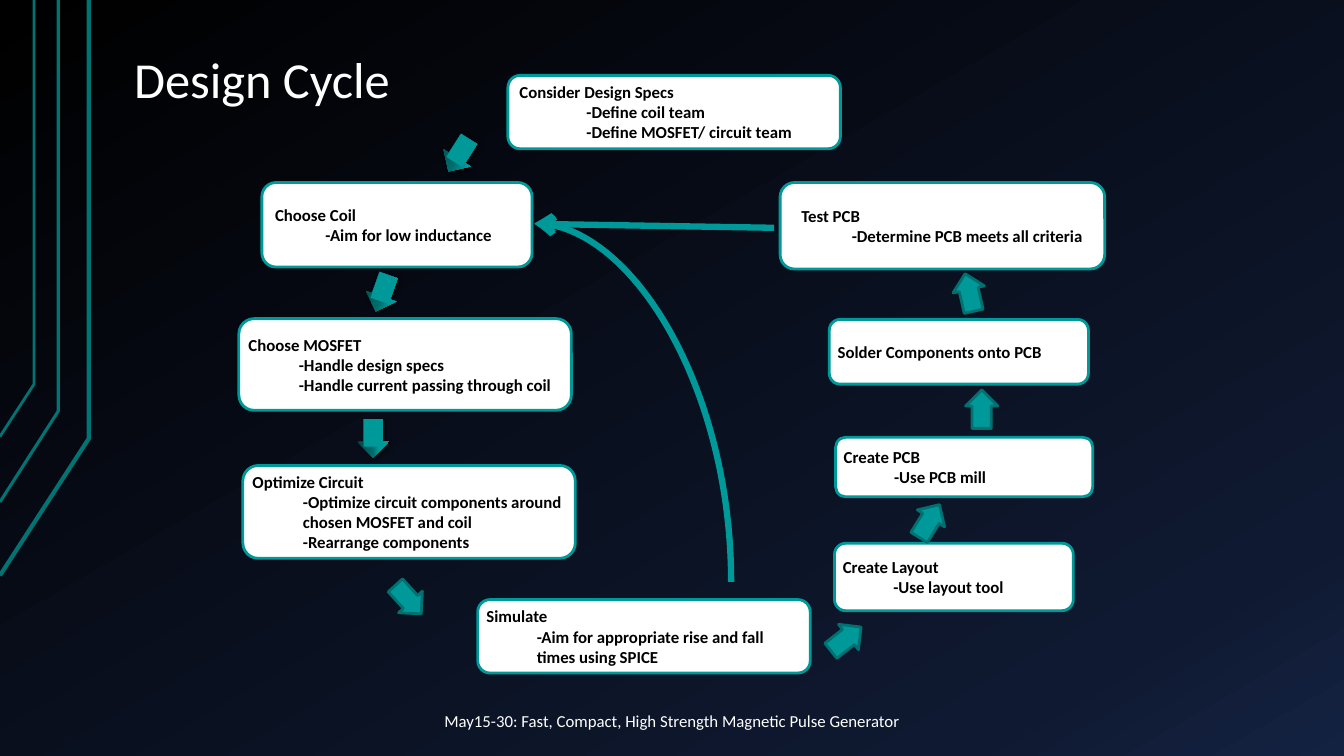
from math import cos, radians, sin

from lxml import etree
from pptx import Presentation
from pptx.dml.color import RGBColor
from pptx.enum.shapes import MSO_CONNECTOR, MSO_SHAPE
from pptx.enum.text import MSO_ANCHOR, PP_ALIGN
from pptx.oxml.ns import qn
from pptx.util import Cm, Pt

ROUNDED = MSO_SHAPE.ROUNDED_RECTANGLE
RECTANGLE = MSO_SHAPE.RECTANGLE
RIGHT_ARROW = MSO_SHAPE.RIGHT_ARROW
STRAIGHT = MSO_CONNECTOR.STRAIGHT
CURVE = MSO_CONNECTOR.CURVE
MIDDLE = MSO_ANCHOR.MIDDLE
BOTTOM = MSO_ANCHOR.BOTTOM
LEFT = PP_ALIGN.LEFT
CENTER = PP_ALIGN.CENTER

TEAL, DARK_TEAL, RAIL_TEAL = "009999", "007171", "007373"
WHITE, BLACK = "FFFFFF", "000000"
NIGHT_SKY = [(0, BLACK), (85, "0F1931"), (100, "142242")]
TEAL_SHADE = [(0, "004343"), (50, "006C6C"), (70, "019B9B"), (100, TEAL)]

TITLE_FONT = {"name": "Calibri", "size": Pt(36), "bold": False}
FOOTER_FONT = {"name": "Calibri", "size": Pt(12), "bold": False}
STEP_FONT = {"name": "Calibri", "size": Pt(12), "bold": True}

ARROW_LENGTH, ARROW_WIDTH = 0.97, 0.81
SHAFT_LENGTH, SHAFT_WIDTH = 0.69, 0.48

STEPS = [
    ((12.8, 1.9, 8.38, 1.85), 0.2, 1.69,
     ["Consider Design Specs", "-Define coil team", "-Define MOSFET/ circuit team"]),
    ((6.6, 4.6, 6.81, 2.13), 0.23, 1.27,
     ["Choose Coil", "-Aim for low inductance"]),
    ((6.02, 8.03, 8.38, 2.31), 0.13, 1.27,
     ["Choose MOSFET", "-Handle design specs", "-Handle current passing through coil"]),
    ((6.12, 11.73, 8.38, 2.34), 0.13, 1.27,
     ["Optimize Circuit", "-Optimize circuit components around chosen MOSFET and coil",
      "-Rearrange components"]),
    ((12.04, 15.11, 8.38, 1.85), 0.13, 1.27,
     ["Simulate", "-Aim for appropriate rise and fall times using SPICE"]),
    ((21.03, 13.69, 6.02, 1.7), 0.13, 1.27, ["Create Layout", "-Use layout tool"]),
    ((21.06, 11.02, 6.48, 1.5), 0.13, 1.27, ["Create PCB", "-Use PCB mill"]),
    ((20.9, 8.05, 6.53, 1.63), 0.13, 1.27, ["Solder Components onto PCB"]),
    ((19.66, 4.6, 8.18, 2.18), 0.43, 1.27,
     ["Test PCB", "-Determine PCB meets all criteria"]),
]
SHADED_ARROWS = [(11.56, 3.91, 122.4), (9.63, 7.39, 109.5), (9.4, 11.05, 90)]
OUTLINED_ARROWS = [(10.29, 15.11, 47.8), (21.32, 16.1, 321.9), (23.42, 13.13, 301.9),
                   (24.74, 10.31, 270), (24.43, 7.37, 257.1)]
RAILS = [(2.24, 11.05, 14.5, 3), (1.47, 10.36, 12.65, 2.25), (0.86, 9.68, 11, 2)]


def color(value):
    return RGBColor.from_string(value)


def apply_format(target, values):
    for name, value in values.items():
        setattr(target, name, value)


def add_element(parent, tag, **attributes):
    return etree.SubElement(parent, qn(tag), attributes)


def set_gradient(fill, stops, angle):
    fill.gradient()
    fill.gradient_angle = 360 - angle
    stop_list = fill._fill._gradFill.find(qn("a:gsLst"))
    for stop in list(stop_list):
        stop_list.remove(stop)
    for position, value in stops:
        stop = add_element(stop_list, "a:gs", pos=str(position * 1000))
        add_element(stop, "a:srgbClr", val=value)


def set_line(line, value, width):
    line.color.rgb = color(value)
    line.width = Pt(width)


def add_solid(slide, kind, box, fill):
    shape = slide.shapes.add_shape(kind, *map(Cm, box))
    shape.shadow.inherit = False
    shape.fill.solid()
    shape.fill.fore_color.rgb = color(fill)
    shape.line.fill.background()
    return shape


def write_text(shape, lines, font, text_color, frame, alignment=LEFT, indent=0):
    text_frame = shape.text_frame
    apply_format(text_frame, {"word_wrap": True, **frame})
    for index, line in enumerate(lines):
        paragraph = text_frame.paragraphs[0] if index == 0 else text_frame.add_paragraph()
        paragraph.alignment = alignment
        if index:
            paragraph._p.get_or_add_pPr().set("marL", str(Cm(indent)))
        run = paragraph.add_run()
        run.text = line
        apply_format(run.font, font)
        run.font.color.rgb = color(text_color)


def add_label(slide, box, text, font, anchor, alignment=LEFT):
    label = slide.shapes.add_textbox(*map(Cm, box))
    frame = {"vertical_anchor": anchor, "margin_left": Cm(0.33), "margin_right": Cm(0.33),
             "margin_top": Cm(0.18), "margin_bottom": Cm(0.18)}
    write_text(label, [text], font, WHITE, frame, alignment)
    return label


def add_step(slide, box, margin, indent, lines):
    step = add_solid(slide, ROUNDED, box, WHITE)
    set_line(step.line, TEAL, 2)
    frame = {"vertical_anchor": MIDDLE, "margin_left": Cm(margin), "margin_right": Cm(0.13),
             "margin_top": Cm(0.1), "margin_bottom": Cm(0.1)}
    write_text(step, lines, STEP_FONT, BLACK, frame, indent=indent)


def add_turned(slide, kind, center_x, center_y, width, height, angle):
    box = (center_x - width / 2, center_y - height / 2, width, height)
    shape = add_solid(slide, kind, box, TEAL)
    shape.rotation = angle
    return shape


def add_arrow(slide, x, y, angle):
    arrow = add_turned(slide, RIGHT_ARROW, x, y, ARROW_LENGTH, ARROW_WIDTH, angle)
    arrow.adjustments[0] = 0.6
    arrow.adjustments[1] = 0.5
    return arrow


def add_shaded_arrow(slide, x, y, angle):
    arrow = add_arrow(slide, x, y, angle)
    set_gradient(arrow.fill, TEAL_SHADE, 270)
    effects = arrow._element.spPr.find(qn("a:effectLst"))
    shadow = add_element(effects, "a:outerShdw", blurRad=str(Pt(3)), dist=str(Pt(2)),
                         dir="2700000", rotWithShape="0")
    add_element(add_element(shadow, "a:srgbClr", val=BLACK), "a:alpha", val="60000")
    back = (ARROW_LENGTH - SHAFT_LENGTH) / 2
    add_turned(slide, RECTANGLE, x - back * cos(radians(angle)), y - back * sin(radians(angle)),
               SHAFT_LENGTH, SHAFT_WIDTH, angle)


def add_return_line(slide, kind, points):
    connector = slide.shapes.add_connector(kind, *map(Cm, points))
    set_line(connector.line, TEAL, 4.5)
    add_element(connector.line._get_or_add_ln(), "a:tailEnd", type="arrow")
    add_element(connector._element.spPr, "a:effectLst")
    return connector


def add_rail(slide, x, bend, end, width):
    builder = slide.shapes.build_freeform(Cm(0), Cm(end))
    builder.add_line_segments([(Cm(x), Cm(bend)), (Cm(x), Cm(0))], close=False)
    rail = builder.convert_to_shape()
    rail.shadow.inherit = False
    rail.fill.background()
    set_line(rail.line, RAIL_TEAL, width)


def main():
    presentation = Presentation()
    presentation.slide_width = Cm(33.87)
    presentation.slide_height = Cm(19.05)
    slide = presentation.slides.add_slide(presentation.slide_layouts[6])
    set_gradient(slide.background.fill, NIGHT_SKY, 60)
    for rail in RAILS:
        add_rail(slide, *rail)
    title = add_label(slide, (3.05, 0, 28.78, 2.95), "Design Cycle", TITLE_FONT, BOTTOM)
    title.text_frame.paragraphs[0].line_spacing = 0.9
    add_label(slide, (9.6, 17.65, 14.68, 1.02),
              "May15-30: Fast, Compact, High Strength Magnetic Pulse Generator",
              FOOTER_FONT, MIDDLE, CENTER)
    for step in STEPS:
        add_step(slide, *step)
    for arrow in SHADED_ARROWS:
        add_shaded_arrow(slide, *arrow)
    curve = add_return_line(slide, CURVE, (11.43, 12.62, 20.47, 7.67))
    curve._element.spPr.find(qn("a:prstGeom")).set("prst", "curvedConnector2")
    curve._element.spPr.find(qn("a:xfrm")).set("rot", "16200000")
    add_return_line(slide, STRAIGHT, (19.51, 5.74, 13.46, 5.64))
    for arrow in OUTLINED_ARROWS:
        set_line(add_arrow(slide, *arrow).line, DARK_TEAL, 2)
    presentation.save("out.pptx")


if __name__ == "__main__":
    main()
